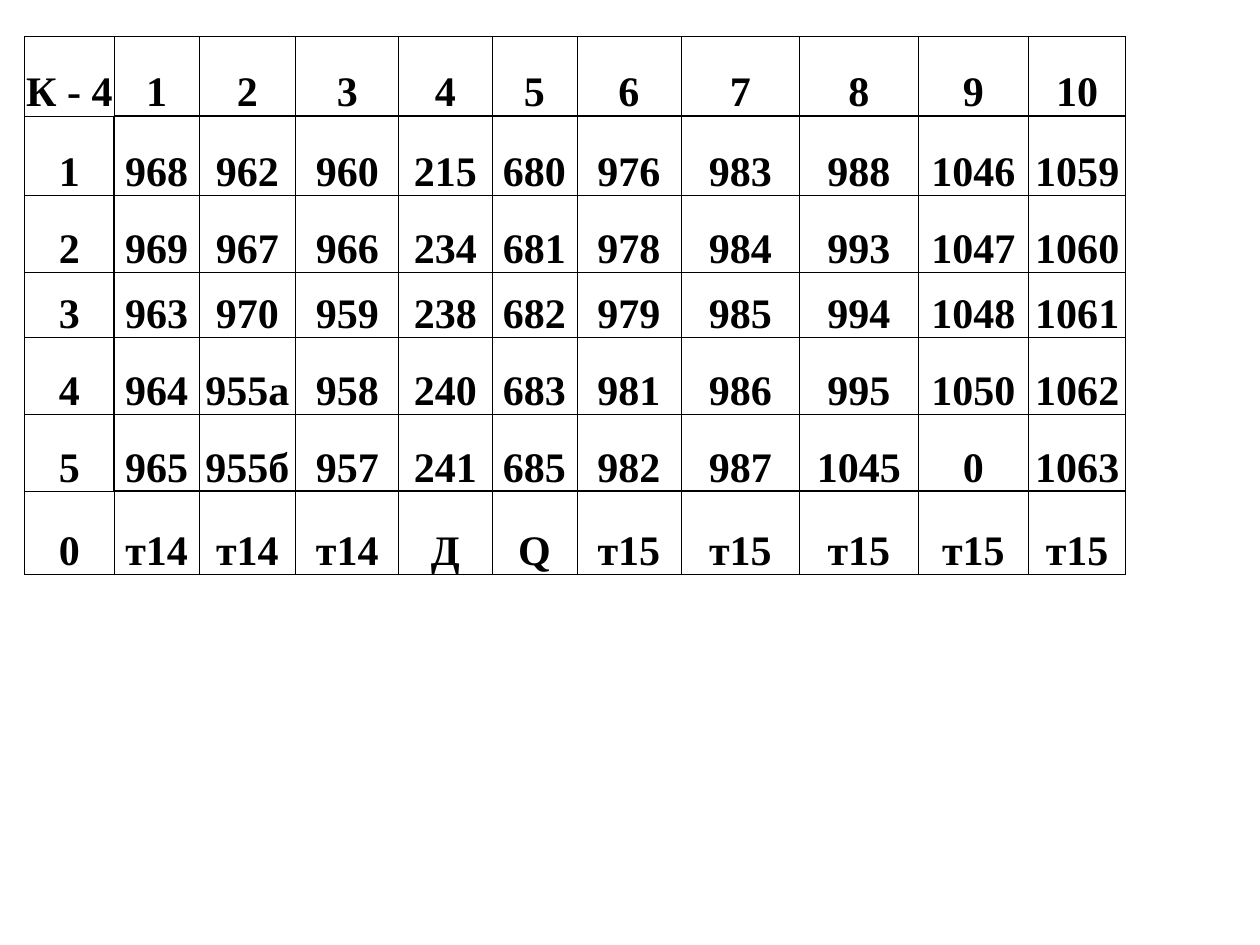
from dataclasses import dataclass

from lxml import etree
from pptx import Presentation
from pptx.dml.color import RGBColor
from pptx.enum import text
from pptx.oxml import ns
from pptx.util import Pt


@dataclass(frozen=True)
class Theme:
    ink: str = "000000"
    font: str = "Times New Roman"
    size: float = 24
    thin: float = 0.5
    thick: float = 1


THEME = Theme()

ANSWER_KEY = [
    row.split("|") for row in (
        "К - 4|1|2|3|4|5|6|7|8|9|10",
        "1|968|962|960|215|680|976|983|988|1046|1059",
        "2|969|967|966|234|681|978|984|993|1047|1060",
        "3|963|970|959|238|682|979|985|994|1048|1061",
        "4|964|955а|958|240|683|981|986|995|1050|1062",
        "5|965|955б|957|241|685|982|987|1045|0|1063",
        "0|т14|т14|т14|Д|Q|т15|т15|т15|т15|т15",
    )
]
COLUMN_WIDTHS = [51.1, 48.6, 55.2, 59, 53.2, 48.6, 59.4, 68, 67.5, 63.3, 55.4]
ROW_HEIGHTS = [45.4, 45.4, 43.9, 37.4, 43.9, 43.9, 47.5]
NEIGHBOURS = {"lnL": (0, -1), "lnR": (0, 1), "lnT": (-1, 0), "lnB": (1, 0)}


def set_attributes(target, values):
    for name, value in values.items():
        setattr(target, name, value)


def in_answers(row, column):
    """Tell whether a cell lies in the block framed by the thick line."""
    return 1 <= row <= 5 and 1 <= column <= 10


def draw_borders(cell, row, column):
    properties = cell._tc.get_or_add_tcPr()
    for side, (down, right) in NEIGHBOURS.items():
        framed = in_answers(row, column) != in_answers(row + down, column + right)
        width = THEME.thick if framed else THEME.thin
        line = etree.SubElement(properties, ns.qn(f"a:{side}"), w=str(Pt(width)))
        fill = etree.SubElement(line, ns.qn("a:solidFill"))
        etree.SubElement(fill, ns.qn("a:srgbClr"), val=THEME.ink)


def write_cell(cell, wording):
    set_attributes(cell, {
        "text": wording,
        "vertical_anchor": text.MSO_ANCHOR.BOTTOM,
        "margin_left": 0, "margin_right": 0,
        "margin_top": 0, "margin_bottom": 0,
    })
    cell.fill.background()
    paragraph = cell.text_frame.paragraphs[0]
    paragraph.alignment = text.PP_ALIGN.CENTER
    font = paragraph.runs[0].font
    set_attributes(font, {"name": THEME.font, "size": Pt(THEME.size), "bold": True})
    font.color.rgb = RGBColor.from_string(THEME.ink)


def add_answer_key(slide, left, top, width, height):
    answer_key = slide.shapes.add_table(
        len(ROW_HEIGHTS), len(COLUMN_WIDTHS),
        Pt(left), Pt(top), Pt(width), Pt(height)).table
    set_attributes(answer_key, {"first_row": False, "horz_banding": False})

    # Share the box out in proportion to the column and row sizes
    for column, share in zip(answer_key.columns, COLUMN_WIDTHS):
        column.width = Pt(width * share / sum(COLUMN_WIDTHS))
    for row, share in zip(answer_key.rows, ROW_HEIGHTS):
        row.height = Pt(height * share / sum(ROW_HEIGHTS))

    # Cells: question numbers outside the frame, answers inside
    for r, wordings in enumerate(ANSWER_KEY):
        for c, wording in enumerate(wordings):
            cell = answer_key.cell(r, c)
            draw_borders(cell, r, c)
            write_cell(cell, wording)


def main():
    deck = Presentation()
    set_attributes(deck, {"slide_width": Pt(720), "slide_height": Pt(540)})
    slide = deck.slides.add_slide(deck.slide_layouts[6])
    add_answer_key(slide, 14.1, 20.9, 629.3, 307.4)
    deck.save("out.pptx")


if __name__ == "__main__":
    main()
